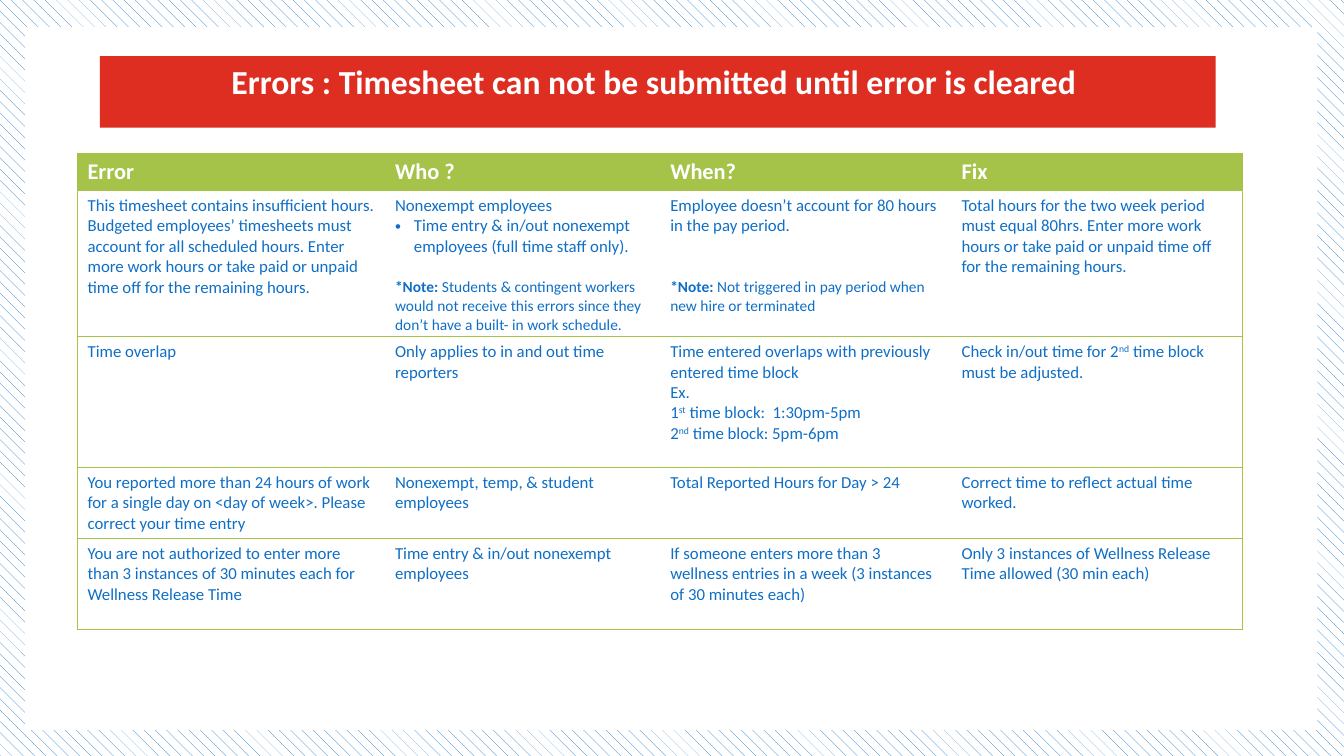
from dataclasses import dataclass

from lxml import etree
from pptx import Presentation
from pptx import util as u
from pptx.dml.color import RGBColor
from pptx.enum import dml, shapes, text
from pptx.oxml import ns


@dataclass(frozen=True)
class Theme:
    font: str = "Calibri"
    white: str = "FFFFFF"
    blue: str = "0F6FC6"
    red: str = "DE2E21"
    green: str = "A5C249"
    title: float = 24
    header: float = 16
    body: float = 12
    note: float = 11
    rule: float = 0.79


THEME = Theme()


@dataclass(frozen=True)
class Span:
    text: str
    size: float = THEME.body
    color: str = THEME.blue
    bold: bool = False
    raised: bool = False


@dataclass(frozen=True)
class Para:
    spans: tuple[Span, ...]
    before: float = 0
    bullet: bool = False
    align: text.PP_ALIGN = text.PP_ALIGN.LEFT


@dataclass(frozen=True)
class Panel:
    left: float
    top: float
    width: float
    height: float
    color: str


def plain(words: str) -> Para:
    return Para((Span(words),))


def ordinal(before: str, suffix: str, after: str) -> Para:
    return Para((Span(before), Span(suffix, raised=True), Span(after)))


def note(words: str, before: float) -> Para:
    return Para((Span("*Note: ", THEME.note, bold=True), Span(words, THEME.note)), before)


def heading(words: str) -> Para:
    return Para((Span(words, THEME.header, THEME.white, True),))


FRAME = Panel(18, 19.44, 923, 502, THEME.white)
BANNER = Panel(71.3, 40.1, 797, 51.1, THEME.red)
TITLE = Para(
    (Span("Errors : Timesheet can not be submitted until error is cleared ", THEME.title, THEME.white, True),),
    align=text.PP_ALIGN.CENTER,
)
TABLE_LEFT, TABLE_TOP = 55.4, 109.5
COLUMN_WIDTHS = (219.6, 196.6, 208.1, 208.1)
ROW_HEIGHTS = (26.6, 104.3, 93.5, 50.7, 64.8)
BLANK_LINE = 14.65
BULLET_INDENT = 13.5

ROWS: list[list[list[Para]]] = [
    [[heading(words)] for words in ("Error", "Who ?", "When?", "Fix")],
    [
        [plain("This timesheet contains insufficient hours. Budgeted employees’ timesheets must account for "
               "all scheduled hours. Enter more work hours or take paid or unpaid time off for the remaining hours.")],
        [
            plain("Nonexempt employees"),
            Para((Span("Time entry & in/out nonexempt employees (full time staff only)."),), bullet=True),
            note("Students & contingent workers would not receive this errors since they "
                 "don’t have a built- in work schedule.", BLANK_LINE),
        ],
        [
            plain("Employee doesn’t account for 80 hours in the pay period."),
            note("Not triggered in pay period when new hire or terminated", 2 * BLANK_LINE),
        ],
        [plain("Total hours for the two week period must equal 80hrs. Enter more work hours or take paid "
               "or unpaid time off for the remaining hours.")],
    ],
    [
        [plain("Time overlap")],
        [plain("Only applies to in and out time reporters")],
        [
            plain("Time entered overlaps with previously entered time block"),
            plain("Ex."),
            ordinal("1", "st", " time block:  1:30pm-5pm"),
            ordinal("2", "nd", " time block: 5pm-6pm"),
        ],
        [ordinal("Check in/out time for 2", "nd", " time block must be adjusted.")],
    ],
    [
        [plain("You reported more than 24 hours of work for a single day on <day of week>. "
               "Please correct your time entry")],
        [plain("Nonexempt, temp, & student employees")],
        [plain("Total Reported Hours for Day > 24")],
        [plain("Correct time to reflect actual time worked.")],
    ],
    [
        [plain("You are not authorized to enter more than 3 instances of 30 minutes each for Wellness Release Time")],
        [plain("Time entry & in/out nonexempt employees")],
        [plain("If someone enters more than 3 wellness entries in a week (3 instances of 30 minutes each)")],
        [plain("Only 3 instances of Wellness Release Time allowed (30 min each)")],
    ],
]


def write(frame, paras: list[Para]) -> None:
    for index, item in enumerate(paras):
        para = frame.paragraphs[0] if index == 0 else frame.add_paragraph()
        layout = {"alignment": item.align, "space_before": u.Pt(item.before)}
        for name, value in layout.items():
            setattr(para, name, value)
        if item.bullet:
            props = para._p.get_or_add_pPr()
            props.set("marL", str(int(u.Pt(BULLET_INDENT))))
            props.set("indent", str(-int(u.Pt(BULLET_INDENT))))
            etree.SubElement(props, ns.qn("a:buFont"), typeface="Arial")
            etree.SubElement(props, ns.qn("a:buChar"), char="•")
        for piece in item.spans:
            span = para.add_run()
            span.text = piece.text
            formats = {"name": THEME.font, "size": u.Pt(piece.size), "bold": piece.bold}
            for name, value in formats.items():
                setattr(span.font, name, value)
            span.font.color.rgb = RGBColor.from_string(piece.color)
            if piece.raised:
                span._r.get_or_add_rPr().set("baseline", "30000")


def add_panel(page, panel: Panel):
    box = page.shapes.add_shape(
        shapes.MSO_SHAPE.RECTANGLE, *map(u.Pt, (panel.left, panel.top, panel.width, panel.height))
    )
    box.shadow.inherit = False
    box.fill.solid()
    box.fill.fore_color.rgb = RGBColor.from_string(panel.color)
    box.line.fill.background()
    return box


def set_borders(cell, first: bool, last: bool) -> None:
    props = cell._tc.get_or_add_tcPr()
    for side, visible in {"L": first, "R": last, "T": True, "B": True}.items():
        edge = etree.SubElement(props, ns.qn(f"a:ln{side}"), w=str(int(u.Pt(THEME.rule))))
        if visible:
            fill = etree.SubElement(edge, ns.qn("a:solidFill"))
            etree.SubElement(fill, ns.qn("a:srgbClr"), val=THEME.green)
        else:
            etree.SubElement(edge, ns.qn("a:noFill"))


def add_error_table(page) -> None:
    table = page.shapes.add_table(
        len(ROW_HEIGHTS), len(COLUMN_WIDTHS), u.Pt(TABLE_LEFT), u.Pt(TABLE_TOP),
        u.Pt(sum(COLUMN_WIDTHS)), u.Pt(sum(ROW_HEIGHTS)),
    ).table
    table.horz_banding = False
    for column, width in zip(table.columns, COLUMN_WIDTHS):
        column.width = u.Pt(width)
    for row_index, (row, height) in enumerate(zip(table.rows, ROW_HEIGHTS)):
        row.height = u.Pt(height)
        for index, (cell, paras) in enumerate(zip(row.cells, ROWS[row_index])):
            set_borders(cell, index == 0, index == len(COLUMN_WIDTHS) - 1)
            cell.fill.solid()
            cell.fill.fore_color.rgb = RGBColor.from_string(THEME.white if row_index else THEME.green)
            cell.margin_bottom = u.Pt(1)
            write(cell.text_frame, paras)


def main() -> None:
    deck = Presentation()
    deck.slide_width, deck.slide_height = u.Pt(960), u.Pt(540)
    page = deck.slides.add_slide(deck.slide_layouts[6])
    backdrop = page.background.fill
    backdrop.patterned()
    backdrop.pattern = dml.MSO_PATTERN.SHINGLE
    backdrop.fore_color.rgb = RGBColor.from_string(THEME.blue)
    backdrop.back_color.rgb = RGBColor.from_string(THEME.white)
    add_panel(page, FRAME)
    banner = add_panel(page, BANNER)
    banner.text_frame.word_wrap = True
    banner.text_frame.vertical_anchor = text.MSO_ANCHOR.TOP
    write(banner.text_frame, [TITLE])
    add_error_table(page)
    deck.save("out.pptx")


if __name__ == "__main__":
    main()
